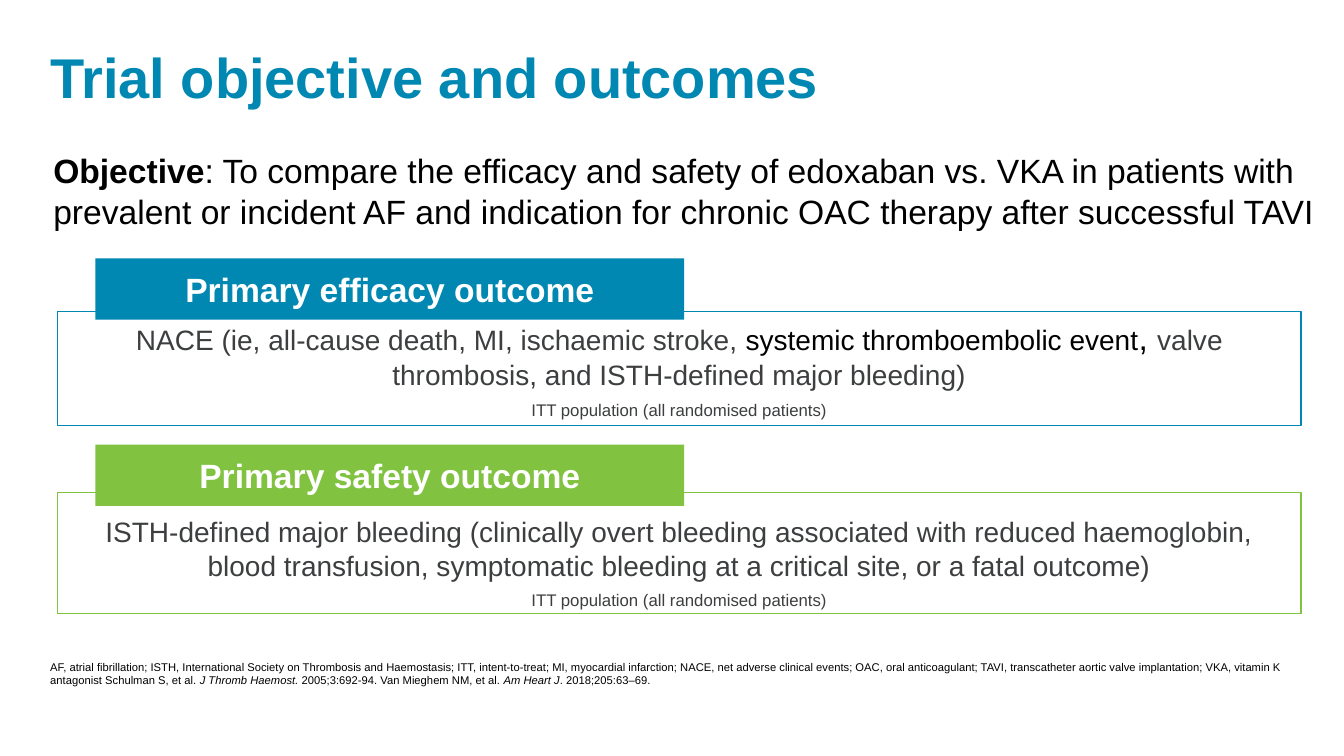
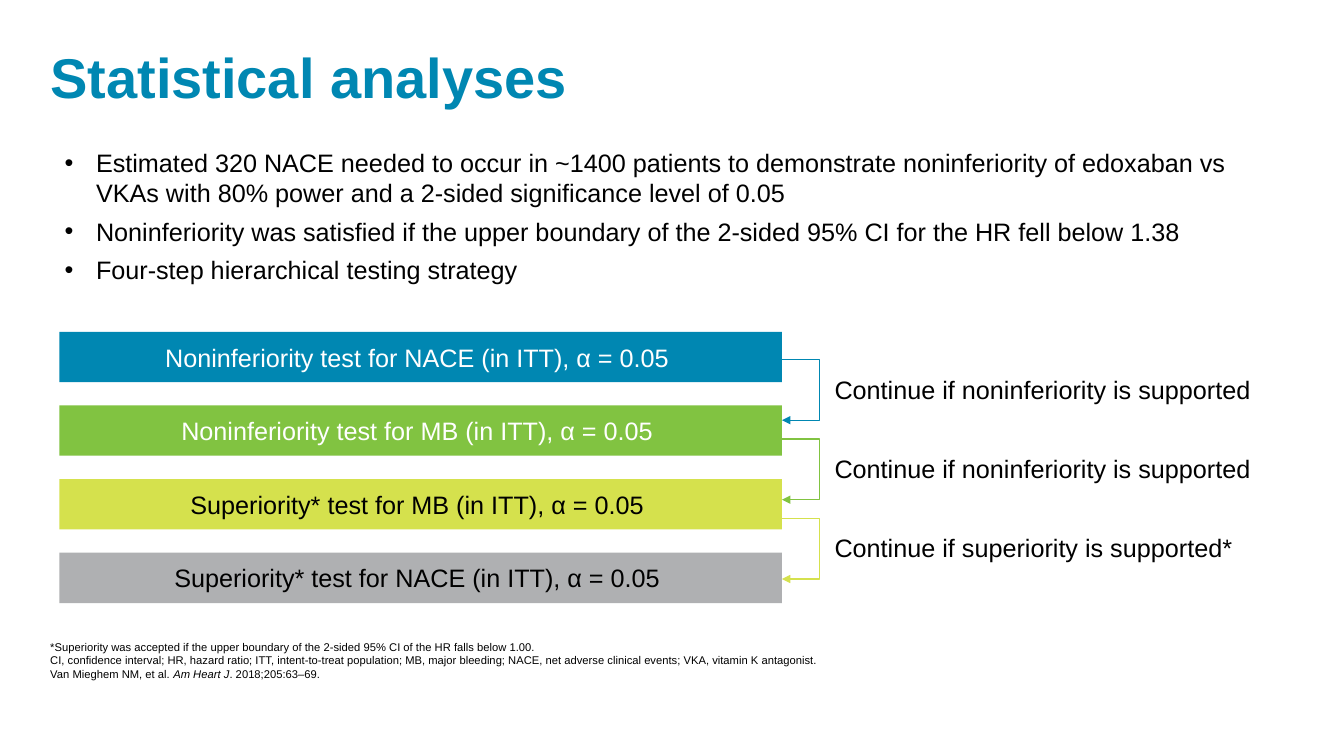
from lxml import etree
from pptx import Presentation
from pptx.dml.color import RGBColor
from pptx.enum.shapes import MSO_CONNECTOR, MSO_SHAPE
from pptx.enum.text import MSO_ANCHOR, MSO_AUTO_SIZE, PP_ALIGN
from pptx.oxml.ns import qn
from pptx.util import Pt

RECTANGLE = MSO_SHAPE.RECTANGLE
ELBOW = MSO_CONNECTOR.ELBOW
TOP, MIDDLE, BOTTOM = MSO_ANCHOR.TOP, MSO_ANCHOR.MIDDLE, MSO_ANCHOR.BOTTOM
LEFT, CENTER = PP_ALIGN.LEFT, PP_ALIGN.CENTER

# Shared look
FONT = "Arial"
BLUE, GREEN, LIME, GREY = "0087B2", "81C341", "D5E14D", "AFB0B2"
BLACK, WHITE, DARK = "000000", "FFFFFF", "3C3E3F"
MARGIN, FOOTNOTE_WIDTH = 28.8, 901.4
POPULATION = "ITT population (all randomised patients)"


def color(value):
    return RGBColor.from_string(value)


def write(box, paras, size, ink=BLACK, align=LEFT, anchor=TOP, spacing=1.0, before=0, after=0):
    """Fill a shape; each paragraph is a list of (text, overrides) runs."""
    frame = box.text_frame
    frame.word_wrap = True
    frame.auto_size = MSO_AUTO_SIZE.NONE
    frame.vertical_anchor = anchor
    for index, spans in enumerate(paras):
        para = frame.add_paragraph() if index else frame.paragraphs[0]
        para.alignment = align
        para.line_spacing = spacing
        para.space_before = Pt(before if index else 0)
        para.space_after = Pt(after)
        for text, style in spans:
            span = para.add_run()
            span.text = text
            span.font.name = FONT
            span.font.size = Pt(style.get("size", size))
            span.font.bold = style.get("bold", False)
            span.font.italic = style.get("italic", False)
            span.font.color.rgb = color(style.get("ink", ink))


deck = Presentation()
deck.slide_width, deck.slide_height = Pt(960), Pt(540)

# Titles and footnotes of both slides: layout, title, footnote top, height, spacing, text
slides = [
    (5, "Trial objective and outcomes", 469.4, 24.5, 0.9, [[
        ("AF, atrial fibrillation; ISTH, International Society on Thrombosis and Haemostasis; "
         "ITT, intent-to-treat; MI, myocardial infarction; NACE, net adverse clinical events; "
         "OAC, oral anticoagulant; TAVI, transcatheter aortic valve implantation; "
         "VKA, vitamin K antagonist Schulman S, et al. ", {}),
        ("J Thromb Haemost. ", {"italic": True}),
        ("2005;3:692-94. Van Mieghem NM, et al. ", {}),
        ("Am Heart J", {"italic": True}),
        (". 2018;205:63–69.", {})]]),
    (1, "Statistical analyses", 453.6, 36, 1.0, [
        [("*Superiority was accepted if the upper boundary of the 2-sided 95% CI "
          "of the HR falls below 1.00.", {})],
        [("CI, confidence interval; HR, hazard ratio; ITT, intent-to-treat population; "
          "MB, major bleeding; NACE, net adverse clinical events; VKA, vitamin K antagonist.", {})],
        [("Van Mieghem NM, et al. ", {}),
         ("Am Heart J", {"italic": True}),
         (". 2018;205:63–69.", {})]]),
]
pages = []
for layout, heading, top, height, spacing, footnote in slides:
    page = deck.slides.add_slide(deck.slide_layouts[layout])
    title = page.shapes.title
    title.left, title.top, title.width, title.height = Pt(MARGIN), Pt(36), Pt(662.4), Pt(104.4)
    write(title, [[(heading, {"bold": True})]], 40, BLUE, spacing=0.8)
    box = page.shapes.add_textbox(Pt(MARGIN), Pt(top), Pt(FOOTNOTE_WIDTH), Pt(height))
    write(box, footnote, 8, anchor=BOTTOM, spacing=spacing)
    pages.append(page)
objective_page, analysis_page = pages

# Objective statement
box = objective_page.shapes.add_textbox(Pt(31), Pt(103.7), Pt(918.7), Pt(65.5))
write(box, [[
    ("Objective", {"bold": True}),
    (": To compare the efficacy and safety of edoxaban vs. VKA in patients with prevalent "
     "or incident AF and indication for chronic OAC therapy after successful TAVI", {})]], 24)

# Outcome panels, each with a header overlapping its top edge
outcomes = [
    ("Primary efficacy outcome", BLUE, 184.5, 222.5, 81.4, 3.6, [
        ("NACE (ie, all-cause death, MI, ischaemic stroke, ", {}),
        ("systemic thromboembolic event", {"ink": BLACK}),
        (", ", {"ink": BLACK, "size": 24}),
        ("valve thrombosis, and ISTH-defined major bleeding)", {})]),
    ("Primary safety outcome", GREEN, 317.5, 352, 86.4, 16.5, [
        ("ISTH-defined major bleeding (clinically overt bleeding associated with reduced "
         "haemoglobin, blood transfusion, symptomatic bleeding at a critical site, "
         "or a fatal outcome)", {})]),
]
for heading, tint, header_top, panel_top, panel_height, inset, outcome in outcomes:
    panel = objective_page.shapes.add_shape(
        RECTANGLE, Pt(41), Pt(panel_top), Pt(888.5), Pt(panel_height))
    panel.shadow.inherit = False
    panel.fill.background()
    panel.line.color.rgb = color(tint)
    panel.line.width = Pt(1)
    panel.text_frame.margin_top = Pt(inset)
    write(panel, [outcome, [(POPULATION, {"size": 12})]], 20, DARK, CENTER, MIDDLE, before=6)

    header = objective_page.shapes.add_shape(
        RECTANGLE, Pt(68.2), Pt(header_top), Pt(420.5), Pt(43.9))
    header.shadow.inherit = False
    header.fill.solid()
    header.fill.fore_color.rgb = color(tint)
    header.line.fill.background()
    write(header, [[(heading, {"bold": True})]], 24, WHITE, CENTER, MIDDLE)

# Bulleted list
body = analysis_page.placeholders[1]
body.left, body.top, body.width, body.height = Pt(38.9), Pt(101.5), Pt(882), Pt(106.6)
write(body, [[(text, {})] for text in (
    "Estimated 320 NACE needed to occur in ~1400 patients to demonstrate noninferiority "
    "of edoxaban vs VKAs with 80% power and a 2-sided significance level of 0.05",
    "Noninferiority was satisfied if the upper boundary of the 2-sided 95% CI for the HR "
    "fell below 1.38",
    "Four-step hierarchical testing strategy")], 18, after=6)
for para in body.text_frame.paragraphs:
    properties = para._p.get_or_add_pPr()
    properties.set("marL", str(Pt(22.5)))
    properties.set("indent", str(-Pt(22.5)))

# Hierarchical tests: bar, then arrow and condition leading to the next bar
BAR_TOP, BAR_PITCH = 237, 52.6
ARROW_TOP, ARROW_DROP, STEP_PITCH = 257, 43.2, 56.7
ARROW_LEFT, ARROW_WIDTH, ARROW_REACH = 557.4, 1.2, 28.2
tests = [
    ("Noninferiority test for NACE (in ITT), α = 0.05 ", BLUE, WHITE,
     "Continue if noninferiority is supported"),
    ("Noninferiority test for MB (in ITT), α = 0.05 ", GREEN, WHITE,
     "Continue if noninferiority is supported"),
    ("Superiority* test for MB (in ITT), α = 0.05 ", LIME, BLACK,
     "Continue if superiority is supported*"),
    ("Superiority* test for NACE (in ITT), α = 0.05 ", GREY, BLACK, None),
]
for step, (test, tint, ink, condition) in enumerate(tests):
    bar = analysis_page.shapes.add_shape(
        RECTANGLE, Pt(42.4), Pt(BAR_TOP + step * BAR_PITCH), Pt(516.2), Pt(36))
    bar.shadow.inherit = False
    bar.fill.solid()
    bar.fill.fore_color.rgb = color(tint)
    bar.line.fill.background()
    write(bar, [[(test, {})]], 18, ink, CENTER, MIDDLE)
    if condition is None:
        continue

    start = ARROW_TOP + step * STEP_PITCH
    arrow = analysis_page.shapes.add_connector(
        ELBOW, Pt(ARROW_LEFT), Pt(start), Pt(ARROW_LEFT + ARROW_WIDTH), Pt(start + ARROW_DROP))
    arrow.line.color.rgb = color(tint)
    arrow.line.width = Pt(1)
    properties = arrow._element.spPr
    etree.SubElement(properties.find(qn("a:ln")), qn("a:tailEnd"), type="triangle")
    etree.SubElement(properties, qn("a:effectLst"))
    # The bend lies beyond the end point, as a share of the connector's width
    bend = round(ARROW_REACH / ARROW_WIDTH * 100000)
    guides = properties.find(qn("a:prstGeom")).find(qn("a:avLst"))
    etree.SubElement(guides, qn("a:gd"), name="adj1", fmla=f"val {bend}")

    label = analysis_page.shapes.add_textbox(
        Pt(589), Pt(263.5 + step * STEP_PITCH), Pt(342), Pt(29))
    write(label, [[(condition, {})]], 18)

deck.save("out.pptx")
